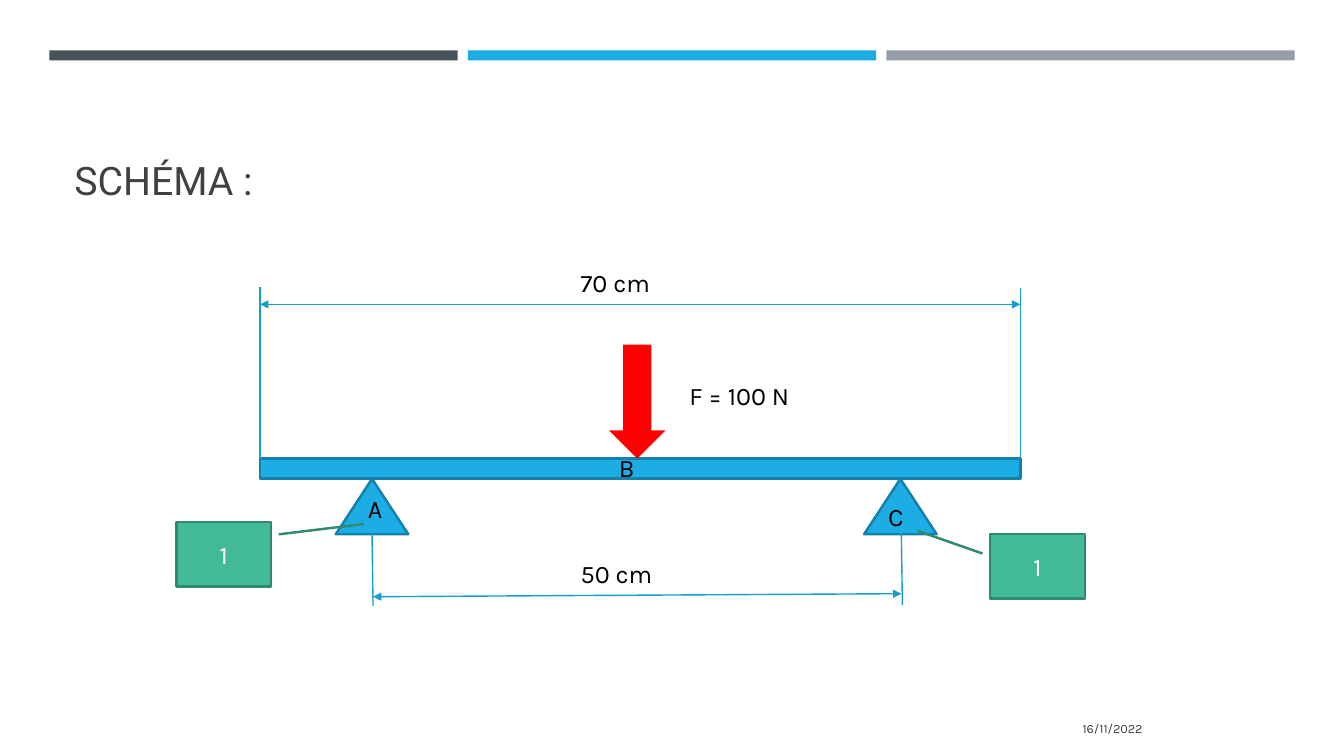
from dataclasses import dataclass

import pptx
import pptx.dml.color
import pptx.enum.shapes
import pptx.enum.text
import pptx.oxml
import pptx.oxml.ns
import pptx.util

PX = 9144
SHAPE = pptx.enum.shapes.MSO_SHAPE
ALIGN = pptx.enum.text.PP_ALIGN
ANCHOR = pptx.enum.text.MSO_ANCHOR
COLORS = {
    "slate": "465359", "blue": "1CADE4", "gray": "969FA7",
    "blue_edge": "1580A9", "dimension": "189CCE", "force": "FF0000",
    "green": "42BA97", "green_edge": "318A70",
    "heading": "404040", "black": "000000", "white": "FFFFFF",
}


@dataclass(frozen=True)
class Box:
    x: int
    y: int
    w: int
    h: int


@dataclass(frozen=True)
class Part:
    kind: SHAPE
    box: Box
    fill: str
    edge: str = ""


@dataclass(frozen=True)
class Line:
    x1: int
    y1: int
    x2: int
    y2: int
    arrows: bool = False


@dataclass(frozen=True)
class Label:
    text: str
    box: Box


@dataclass(frozen=True)
class Callout:
    text: str
    box: Box
    adjustments: tuple[float, ...]


BEAM = Box(258, 455, 754, 20)
BEAM_RIGHT = BEAM.x + BEAM.w
BEAM_BOTTOM = BEAM.y + BEAM.h

PARTS = [
    *(Part(SHAPE.RECTANGLE, Box(49 + 415 * i, 50, 405, 10), fill)
      for i, fill in enumerate(("slate", "blue", "gray"))),
    *(Part(SHAPE.ISOSCELES_TRIANGLE, Box(x, BEAM_BOTTOM, 72, 55), "blue", "blue_edge")
      for x in (333, 857)),
    Part(SHAPE.RECTANGLE, BEAM, "blue", "blue_edge"),
    Part(SHAPE.DOWN_ARROW, Box(604, 342, 56, 113), "force"),
]
LINES = [
    Line(370, 592, 894, 589, True),
    Line(BEAM.x, 302, BEAM_RIGHT, 302, True),
    Line(369, 530, 370, 601),
    Line(894, 529, 895, 600),
    Line(BEAM.x, 285, BEAM.x, BEAM.y),
    Line(BEAM_RIGHT, 286, BEAM_RIGHT, BEAM.y),
]
LABELS = [
    Label("A", Box(355, 484, 99, 40)),
    Label("C", Box(871, 492, 99, 40)),
    Label("B", Box(604, 444, 99, 40)),
    Label("F = 100 N", Box(674, 372, 137, 40)),
    Label("50 cm", Box(566, 549, 137, 40)),
    Label("70 cm", Box(566, 260, 137, 40)),
]
CALLOUTS = [
    Callout("1", Box(175, 518, 94, 64), (0.19, 1.08, 0.03, 1.98)),
    Callout("1", Box(982, 530, 94, 64), (0.3, -0.08, -0.05, -0.76)),
]


def emu(*px: int) -> list[pptx.util.Emu]:
    return [pptx.util.Emu(v * PX) for v in px]


def rgb(name: str) -> pptx.dml.color.RGBColor:
    return pptx.dml.color.RGBColor.from_string(COLORS[name])


def write(tf, text: str, *, size: int = 18, font: str = "Karla", color: str = "black",
          align: ALIGN = ALIGN.LEFT, anchor: ANCHOR = ANCHOR.TOP) -> None:
    tf.word_wrap = True
    tf.vertical_anchor = anchor
    p = tf.paragraphs[0]
    p.alignment = align
    r = p.add_run()
    r.text = text
    r.font.size = pptx.util.Pt(size)
    r.font.name = font
    r.font.color.rgb = rgb(color)


def add_text(s, label: Label, **style) -> None:
    b = label.box
    sp = s.shapes.add_textbox(*emu(b.x, b.y, b.w, b.h))
    write(sp.text_frame, label.text, **style)


def add_part(s, part: Part):
    b = part.box
    sp = s.shapes.add_shape(part.kind, *emu(b.x, b.y, b.w, b.h))
    sp.shadow.inherit = False
    sp.fill.solid()
    sp.fill.fore_color.rgb = rgb(part.fill)
    if part.edge:
        sp.line.color.rgb = rgb(part.edge)
        sp.line.width = pptx.util.Pt(1.75)
    else:
        sp.line.fill.background()
    return sp


def add_line(s, line: Line) -> None:
    cx = s.shapes.add_connector(pptx.enum.shapes.MSO_CONNECTOR.STRAIGHT,
                                *emu(line.x1, line.y1, line.x2, line.y2))
    cx.line.color.rgb = rgb("dimension")
    cx.line.width = pptx.util.Pt(1)
    if line.arrows:
        ln = cx.line._get_or_add_ln()
        for tag in ("headEnd", "tailEnd"):
            end = pptx.oxml.parse_xml(f'<a:{tag} {pptx.oxml.ns.nsdecls("a")} type="triangle"/>')
            ln.append(end)
    effects = pptx.oxml.parse_xml(f'<a:effectLst {pptx.oxml.ns.nsdecls("a")}/>')
    cx._element.spPr.append(effects)


def add_callout(s, callout: Callout) -> None:
    sp = add_part(s, Part(SHAPE.LINE_CALLOUT_1, callout.box, "green", "green_edge"))
    for i, value in enumerate(callout.adjustments):
        sp.adjustments[i] = value
    write(sp.text_frame, callout.text, color="white", align=ALIGN.CENTER, anchor=ANCHOR.MIDDLE)


def main() -> None:
    prs = pptx.Presentation()
    prs.slide_width, prs.slide_height = emu(1333, 750)
    s = prs.slides.add_slide(prs.slide_layouts[6])
    add_text(s, Label("SCHÉMA :", Box(64, 77, 1206, 130)),
             size=28, font="Roboto", color="heading", anchor=ANCHOR.BOTTOM)
    add_text(s, Label("16/11/2022", Box(832, 703, 311, 40)),
             size=9, color="heading", align=ALIGN.RIGHT, anchor=ANCHOR.MIDDLE)
    for part in PARTS:
        add_part(s, part)
    for line in LINES:
        add_line(s, line)
    for label in LABELS:
        add_text(s, label)
    for callout in CALLOUTS:
        add_callout(s, callout)
    prs.save("out.pptx")


if __name__ == "__main__":
    main()
